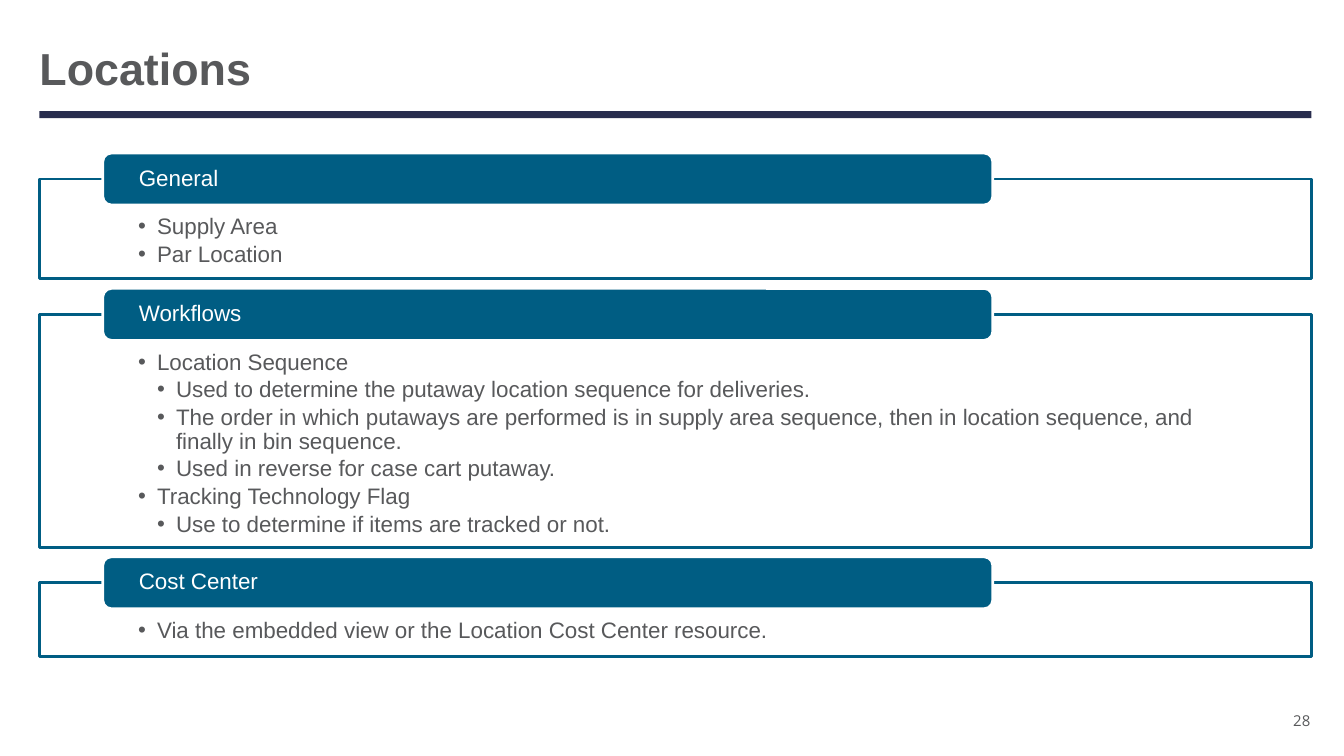
from pptx import Presentation
from pptx.dml.color import RGBColor
from pptx.enum.shapes import MSO_SHAPE as SHAPE
from pptx.enum.text import MSO_ANCHOR as ANCHOR, MSO_AUTO_SIZE as AUTO, PP_ALIGN as ALIGN
from pptx.oxml.ns import qn
from pptx.util import Pt

NAVY = RGBColor(0x28, 0x2D, 0x4E)
TEAL = RGBColor(0x00, 0x5D, 0x83)
GREY = RGBColor(0x58, 0x59, 0x5B)
WHITE = RGBColor(0xFF, 0xFF, 0xFF)

LEFT, WIDTH = 28.2, 908.6
FIRST_TOP, GAP = 127.9, 25.4
HEADER_LEFT, HEADER_WIDTH, HEADER_HEIGHT = 73.4, 635.8, 37.2
INDENT = 13.5

SECTIONS = [
    ("General", 71.3, [(1, "Supply Area"), (1, "Par Location")]),
    ("Workflows", 166.3, [
        (1, "Location Sequence"),
        (2, "Used to determine the putaway location sequence for deliveries."),
        (2, "The order in which putaways are performed is in supply area sequence, "
            "then in location sequence, and finally in bin sequence."),
        (2, "Used in reverse for case cart putaway."),
        (1, "Tracking Technology Flag"),
        (2, "Use to determine if items are tracked or not."),
    ]),
    ("Cost Center", 52.6, [
        (1, "Via the embedded view or the Location Cost Center resource."),
    ]),
]


def place(sp, left, top, width, height):
    sp.left, sp.top, sp.width, sp.height = Pt(left), Pt(top), Pt(width), Pt(height)


def set_frame(tf, left=0, top=0, right=0, bottom=0, anchor=ANCHOR.MIDDLE):
    tf.word_wrap = True
    tf.auto_size = AUTO.NONE
    tf.vertical_anchor = anchor
    tf.margin_left, tf.margin_top = Pt(left), Pt(top)
    tf.margin_right, tf.margin_bottom = Pt(right), Pt(bottom)


def write(p, text, size=16, font="Arial", color=GREY, bold=False,
          align=ALIGN.LEFT, spacing=0.9, after=0):
    p.alignment = align
    p.line_spacing = spacing
    p.space_before, p.space_after = Pt(0), Pt(after)
    r = p.add_run()
    r.text = text
    r.font.size, r.font.name, r.font.bold = Pt(size), font, bold
    r.font.color.rgb = color


def add_bullet(p, level):
    p.level = level
    pPr = p._p.get_or_add_pPr()
    pPr.set("marL", str(Pt(INDENT * level)))
    pPr.set("indent", str(-Pt(INDENT)))
    pPr.makeelement(qn("a:buFont"), {})
    for tag, attrs in (("a:buFont", {"typeface": "Arial"}), ("a:buChar", {"char": "•"})):
        pPr.append(pPr.makeelement(qn(tag), attrs))


def paint(sp, fill, line=None):
    sp.fill.solid()
    sp.fill.fore_color.rgb = fill
    if line is None:
        sp.line.fill.background()
    else:
        sp.line.color.rgb = line
        sp.line.width = Pt(2)


def add_block(s, shape, left, top, width, height, fill, line=None):
    sp = s.shapes.add_shape(shape, Pt(left), Pt(top), Pt(width), Pt(height))
    sp.shadow.inherit = False
    paint(sp, fill, line)
    return sp


def fill_title(s, text):
    sp = s.shapes.title
    place(sp, LEFT, 29.5, WIDTH, 43.9)
    set_frame(sp.text_frame, top=3.6, bottom=3.6)
    write(sp.text_frame.paragraphs[0], text, size=32, bold=True, spacing=0.85)


def fill_list(sp, top, height, items):
    place(sp, LEFT, top, WIDTH, height)
    paint(sp, WHITE, TEAL)
    tf = sp.text_frame
    set_frame(tf, 70.5, 26, 70.5, 8.6, ANCHOR.TOP)
    for i, (level, text) in enumerate(items):
        p = tf.add_paragraph() if i else tf.paragraphs[0]
        write(p, text, after=2.4)
        add_bullet(p, level)


def add_header(s, top, text):
    sp = add_block(s, SHAPE.ROUNDED_RECTANGLE, HEADER_LEFT, top - HEADER_HEIGHT / 2,
                   HEADER_WIDTH, HEADER_HEIGHT, TEAL, WHITE)
    set_frame(sp.text_frame, left=24, right=24)
    write(sp.text_frame.paragraphs[0], text, color=WHITE)


def add_page_number(s, text):
    sp = s.shapes.add_textbox(Pt(900), Pt(498.2), Pt(36), Pt(33.1))
    set_frame(sp.text_frame)
    write(sp.text_frame.paragraphs[0], text, size=10.7, font="Open Sans",
          align=ALIGN.RIGHT, spacing=1.0)


def main():
    prs = Presentation()
    prs.slide_width, prs.slide_height = Pt(960), Pt(540)
    s = prs.slides.add_slide(prs.slide_layouts.get_by_name("Comparison"))
    fill_title(s, "Locations")
    add_block(s, SHAPE.RECTANGLE, LEFT, 79.4, WIDTH, 5, NAVY)

    bodies = [ph for ph in s.placeholders if ph.placeholder_format.idx > 0]
    top = FIRST_TOP
    for body, (header, height, items) in zip(bodies, SECTIONS):
        fill_list(body, top, height, items)
        add_header(s, top, header)
        top += height + GAP
    for body in bodies[len(SECTIONS):]:
        body.element.getparent().remove(body.element)

    add_page_number(s, "28")
    prs.save("out.pptx")


if __name__ == "__main__":
    main()
